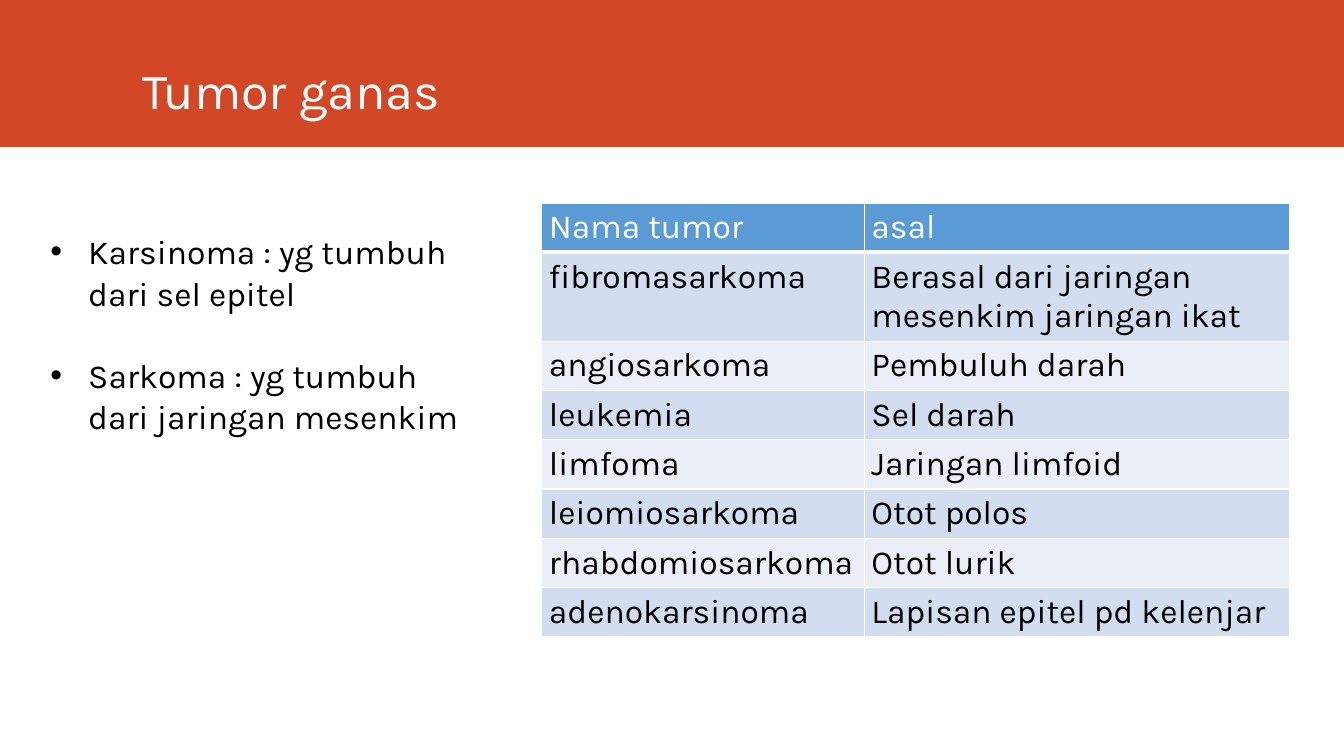
from typing import NamedTuple

from lxml.etree import SubElement
from pptx import Presentation
from pptx.dml.color import RGBColor
from pptx.enum.shapes import MSO_SHAPE
from pptx.enum.text import MSO_ANCHOR, MSO_AUTO_SIZE, PP_ALIGN
from pptx.oxml.ns import qn
from pptx.util import Pt

FONT = "Karla"
WHITE = RGBColor(0xFF, 0xFF, 0xFF)
BLACK = RGBColor(0, 0, 0)
ORANGE = RGBColor(0xD2, 0x47, 0x26)
HEADER_BLUE = RGBColor(0x5B, 0x9B, 0xD5)
BAND_DARK = RGBColor(0xD2, 0xDE, 0xEF)
BAND_LIGHT = RGBColor(0xEA, 0xEF, 0xF7)
LINE_HEIGHT = 1.03


class Tumor(NamedTuple):
    name: str
    origin: str
    height: float = 35


HEADER = Tumor("Nama tumor", "asal")
TUMORS = [
    Tumor("fibromasarkoma", "Berasal dari jaringan mesenkim jaringan ikat", 63.5),
    Tumor("angiosarkoma", "Pembuluh darah"),
    Tumor("leukemia", "Sel darah"),
    Tumor("limfoma", "Jaringan limfoid"),
    Tumor("leiomiosarkoma", "Otot polos"),
    Tumor("rhabdomiosarkoma", "Otot lurik"),
    Tumor("adenokarsinoma", "Lapisan epitel pd kelenjar"),
]
DEFINITIONS = [
    "Karsinoma : yg tumbuh dari sel epitel",
    "Sarkoma : yg tumbuh dari jaringan mesenkim",
]


def place(sp, left: float, top: float, width: float, height: float) -> None:
    sp.left, sp.top, sp.width, sp.height = Pt(left), Pt(top), Pt(width), Pt(height)


def add_run(p, text: str, color: RGBColor, size: float = 24) -> None:
    r = p.add_run()
    r.text = text
    r.font.name = FONT
    r.font.size = Pt(size)
    r.font.color.rgb = color


def set_bullet(p, indent: float) -> None:
    pPr = p._p.get_or_add_pPr()
    pPr.set("marL", str(Pt(indent)))
    pPr.set("indent", str(-Pt(indent)))
    SubElement(pPr, qn("a:buFont"), typeface="Arial")
    SubElement(pPr, qn("a:buChar"), char="•")


def set_borders(cell, bottom: float) -> None:
    tcPr = cell._tc.get_or_add_tcPr()
    sides = [("a:lnL", 1), ("a:lnR", 1), ("a:lnT", 1), ("a:lnB", bottom)]
    for tag, width in sides:
        ln = SubElement(tcPr, qn(tag), w=str(Pt(width)))
        fill = SubElement(ln, qn("a:solidFill"))
        SubElement(fill, qn("a:srgbClr"), val=str(WHITE))


def fill_cell(cell, text: str, fill: RGBColor, color: RGBColor, bottom: float) -> None:
    set_borders(cell, bottom)
    cell.fill.solid()
    cell.fill.fore_color.rgb = fill
    cell.margin_left = cell.margin_right = Pt(5.2)
    cell.margin_top = cell.margin_bottom = Pt(3.6)
    add_run(cell.text_frame.paragraphs[0], text, color)


def main() -> None:
    prs = Presentation()
    prs.slide_width, prs.slide_height = Pt(960), Pt(540)
    s = prs.slides.add_slide(prs.slide_layouts[1])

    # Header band, behind the title
    band = s.shapes.add_shape(MSO_SHAPE.RECTANGLE, 0, 0, Pt(960), Pt(105))
    band.shadow.inherit = False
    band.fill.solid()
    band.fill.fore_color.rgb = ORANGE
    band.line.fill.background()
    s.shapes._spTree.insert(2, band._element)

    # Title
    title = s.shapes.title
    place(title, 94.3, 13, 624, 76.3)
    tf = title.text_frame
    tf.auto_size = MSO_AUTO_SIZE.NONE
    tf.vertical_anchor = MSO_ANCHOR.BOTTOM
    p = tf.paragraphs[0]
    p.alignment = PP_ALIGN.LEFT
    add_run(p, "Tumor ganas", WHITE, 36)

    # Definitions
    body = s.placeholders[1]
    place(body, 28.8, 160.6, 314, 152.6)
    tf = body.text_frame
    tf.auto_size = MSO_AUTO_SIZE.NONE
    tf.vertical_anchor = MSO_ANCHOR.TOP
    for i, text in enumerate(DEFINITIONS):
        p = tf.add_paragraph() if i else tf.paragraphs[0]
        set_bullet(p, 27)
        p.line_spacing = LINE_HEIGHT
        p.space_before = Pt(29 if i else 0)
        add_run(p, text, BLACK)

    # Table of malignant tumors
    rows = [HEADER, *TUMORS]
    total = sum(row.height for row in rows)
    table = s.shapes.add_table(
        len(rows), 2, Pt(386.9), Pt(145), Pt(534), Pt(total)).table
    for column, width in zip(table.columns, (230.4, 303.6)):
        column.width = Pt(width)
    for i, tumor in enumerate(rows):
        table.rows[i].height = Pt(tumor.height)
        band_fill = BAND_DARK if i % 2 else BAND_LIGHT
        fill, color, bottom = (band_fill, BLACK, 1) if i else (HEADER_BLUE, WHITE, 3)
        for j, text in enumerate((tumor.name, tumor.origin)):
            fill_cell(table.cell(i, j), text, fill, color, bottom)

    prs.save("out.pptx")


if __name__ == "__main__":
    main()
